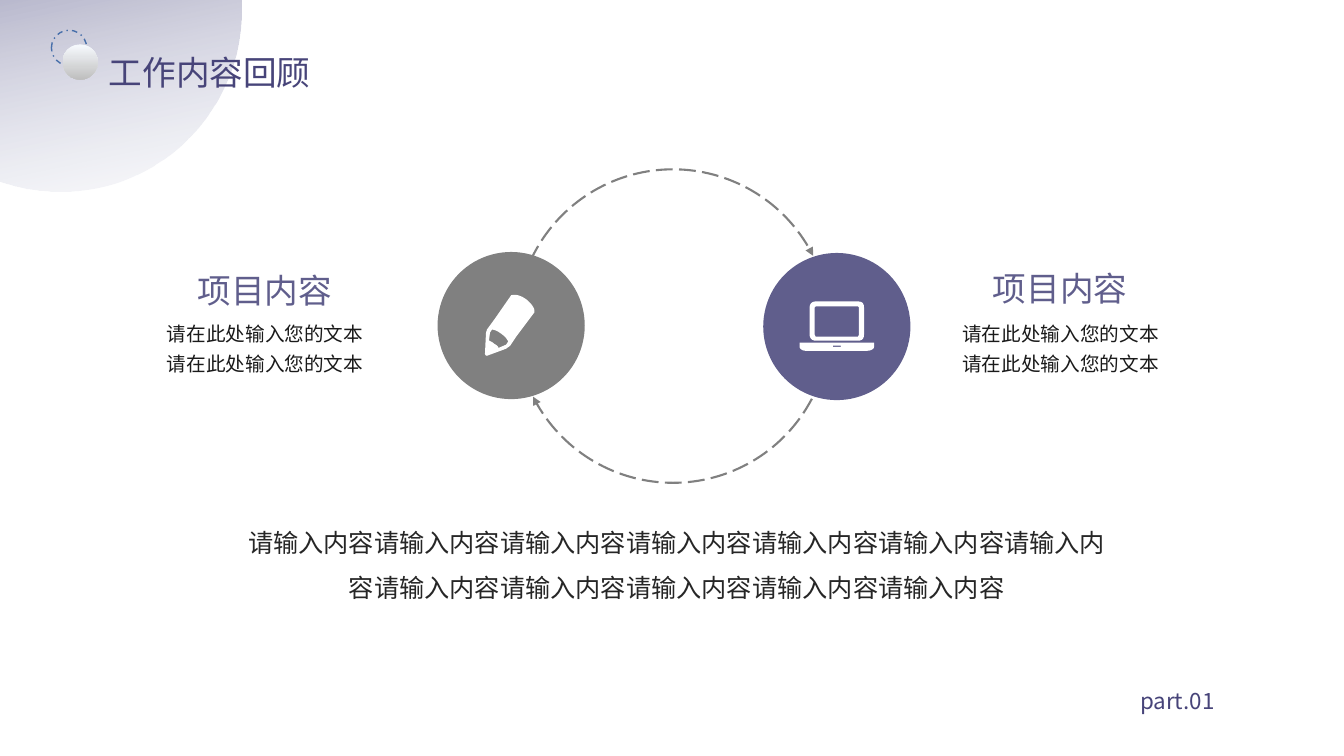
from lxml import etree
from pptx import Presentation
from pptx.dml.color import RGBColor
from pptx.enum.dml import MSO_LINE
from pptx.enum.shapes import MSO_SHAPE
from pptx.enum.text import MSO_ANCHOR, PP_ALIGN
from pptx.oxml.ns import qn
from pptx.util import Inches, Pt

OVAL, ARC = MSO_SHAPE.OVAL, MSO_SHAPE.ARC
DOTS, LONG = MSO_LINE.DASH_DOT, MSO_LINE.LONG_DASH
TOP, MID, FULL = MSO_ANCHOR.TOP, PP_ALIGN.CENTER, PP_ALIGN.JUSTIFY
FONT = "Noto Sans CJK SC"
DARK, PLUM, GRAY, PALE = "474479", "605E8C", "808080", "F7FAFE"
hue = RGBColor.from_string


def paint(shape, fill=None, line=None, width=1, dash=None):
    shape.shadow.inherit = False
    if isinstance(fill, tuple):
        shape.fill.gradient()
        shape.fill.gradient_angle = 270
        for stop, color in zip(shape.fill.gradient_stops, fill):
            stop.color.rgb = hue(color)
    elif fill:
        shape.fill.solid()
        shape.fill.fore_color.rgb = hue(fill)
    else:
        shape.fill.background()
    if line:
        shape.line.color.rgb = hue(line)
        shape.line.width = Pt(width)
        shape.line.dash_style = dash
    else:
        shape.line.fill.background()
    return shape


def write(text, x, y, w, h, size, color, align=MID, gap=1.5, before=0, inset=True, box=None):
    place = [Inches(v) for v in (x, y, w, h)]
    box = box or shapes.add_textbox(*place)
    box.left, box.top, box.width, box.height = place
    frame = box.text_frame
    frame.word_wrap = True
    frame.vertical_anchor = TOP
    if not inset:
        frame.margin_left = frame.margin_right = frame.margin_top = frame.margin_bottom = 0
    frame.text = text
    for para in frame.paragraphs:
        para.alignment = align
        para.line_spacing = gap
        para.space_before = Pt(before)
        font = para.runs[0].font
        font.size = Pt(size)
        font.color.rgb = hue(color)
        font.name = FONT
        props = para.runs[0]._r.get_or_add_rPr()
        etree.SubElement(props, qn("a:ea"), typeface=FONT)


deck = Presentation()
deck.slide_width, deck.slide_height = Inches(13.33), Inches(7.5)
slide = deck.slides.add_slide(deck.slide_layouts[5])
shapes = slide.shapes
title = shapes.title

moon = shapes.add_shape(OVAL, Inches(-1.21), Inches(-1.73), Inches(3.6), Inches(3.63))
paint(moon, (PALE, DARK))
moon.rotation = 168
clear = next(moon._element.iter(qn("a:srgbClr")))
etree.SubElement(clear, qn("a:alpha"), val="29000")

ring = shapes.add_shape(OVAL, Inches(0.51), Inches(0.3), Inches(0.35), Inches(0.35))
paint(ring, line="476FAA", dash=DOTS)
ball = shapes.add_shape(OVAL, Inches(0.62), Inches(0.44), Inches(0.35), Inches(0.35))
paint(ball, (PALE, "BFBFBF"))

shapes._spTree.append(title._element)
write("工作内容回顾", 0.98, 0.26, 3.19, 0.64, 24, DARK, FULL, box=title)
write("part.01", 11.21, 6.63, 1.55, 0.46, 16, DARK, FULL)

for start, end in ((122.728, 200.038), (16.579, 91.949)):
    arc = shapes.add_shape(ARC, Inches(5.12), Inches(1.68), Inches(3.11), Inches(3.11))
    arc.adjustments[0], arc.adjustments[1] = start, end
    paint(arc, line=GRAY, width=1.5, dash=LONG)
    etree.SubElement(arc.line._get_or_add_ln(), qn("a:tailEnd"), type="triangle")

for x, y, color in ((4.34, 2.5, GRAY), (7.57, 2.51, PLUM)):
    paint(shapes.add_shape(OVAL, Inches(x), Inches(y), Inches(1.46), Inches(1.46)), color)

pencil = [
    [(5.02, 3.42), (4.95, 3.45), (4.94, 3.45, 4.94, 3.45, 4.94, 3.44),
     (4.93, 3.43, 4.92, 3.42, 4.9, 3.41), (4.88, 3.39, 4.87, 3.39, 4.85, 3.38),
     (4.86, 3.3), (4.88, 3.27), (4.88, 3.27, 4.92, 3.27, 4.97, 3.31),
     (5.03, 3.35, 5.04, 3.39, 5.04, 3.39)],
    [(5.22, 2.97), (5.15, 2.92, 5.1, 2.92, 5.07, 2.93), (4.91, 3.16), (4.83, 3.27),
     (4.83, 3.28, 4.82, 3.29, 4.82, 3.31), (4.81, 3.51), (4.81, 3.52, 4.82, 3.53, 4.83, 3.53),
     (5.02, 3.46), (5.03, 3.45, 5.05, 3.44, 5.06, 3.43), (5.12, 3.34), (5.3, 3.1),
     (5.3, 3.09, 5.3, 3.09, 5.3, 3.08), (5.3, 3.06, 5.28, 3.02, 5.22, 2.97)],
]
laptop = [
    [(7.93, 3.4), (8.67, 3.4), (8.67, 3.44), (8.67, 3.46, 8.64, 3.48, 8.6, 3.48),
     (7.99, 3.48), (7.96, 3.48, 7.93, 3.46, 7.93, 3.44)],
    [(8.03, 3.32), (8.03, 3.05), (8.03, 3.01, 8.06, 2.99, 8.09, 2.99), (8.51, 2.99),
     (8.55, 2.99, 8.57, 3.01, 8.57, 3.05), (8.57, 3.32),
     (8.57, 3.36, 8.55, 3.38, 8.51, 3.38), (8.09, 3.38),
     (8.06, 3.38, 8.03, 3.36, 8.03, 3.32)],
    [(8.08, 3.32), (8.09, 3.34), (8.51, 3.34), (8.52, 3.32), (8.52, 3.05),
     (8.51, 3.04), (8.09, 3.04), (8.08, 3.05)],
    [(8.26, 3.43), (8.34, 3.43), (8.34, 3.44), (8.26, 3.44)],
]
for icon in (pencil, laptop):
    pen = None
    for loop in icon:
        dots = [loop[0]]
        for step in loop[1:]:
            if len(step) == 2:
                dots.append(step)
                continue
            knots = [dots[-1], step[:2], step[2:4], step[4:]]
            for t in (0.2, 0.4, 0.6, 0.8, 1):
                parts = ((1 - t) ** 3, 3 * t * (1 - t) ** 2, 3 * t * t * (1 - t), t ** 3)
                dots.append(tuple(sum(p * k[i] for p, k in zip(parts, knots)) for i in (0, 1)))
        spots = [(Inches(x), Inches(y)) for x, y in dots]
        if pen:
            pen.move_to(*spots[0])
        else:
            pen = shapes.build_freeform(*spots[0])
        pen.add_line_segments(spots[1:], close=True)
    paint(pen.convert_to_shape(), "FFFFFF")

for x, y in ((1.49, 2.6), (9.38, 2.58)):
    write("请在此处输入您的文本\n请在此处输入您的文本", x, 3.12, 2.28, 0.58, 14, "1A1A1A", gap=1.3, inset=False)
    write("项目内容", x + 0.45, y, 1.37, 0.44, 24, PLUM, gap=1.2, before=3, inset=False)

write("请输入内容" * 12, 2.27, 5.03, 8.88, 0.96, 18, "262626")

deck.save("out.pptx")
